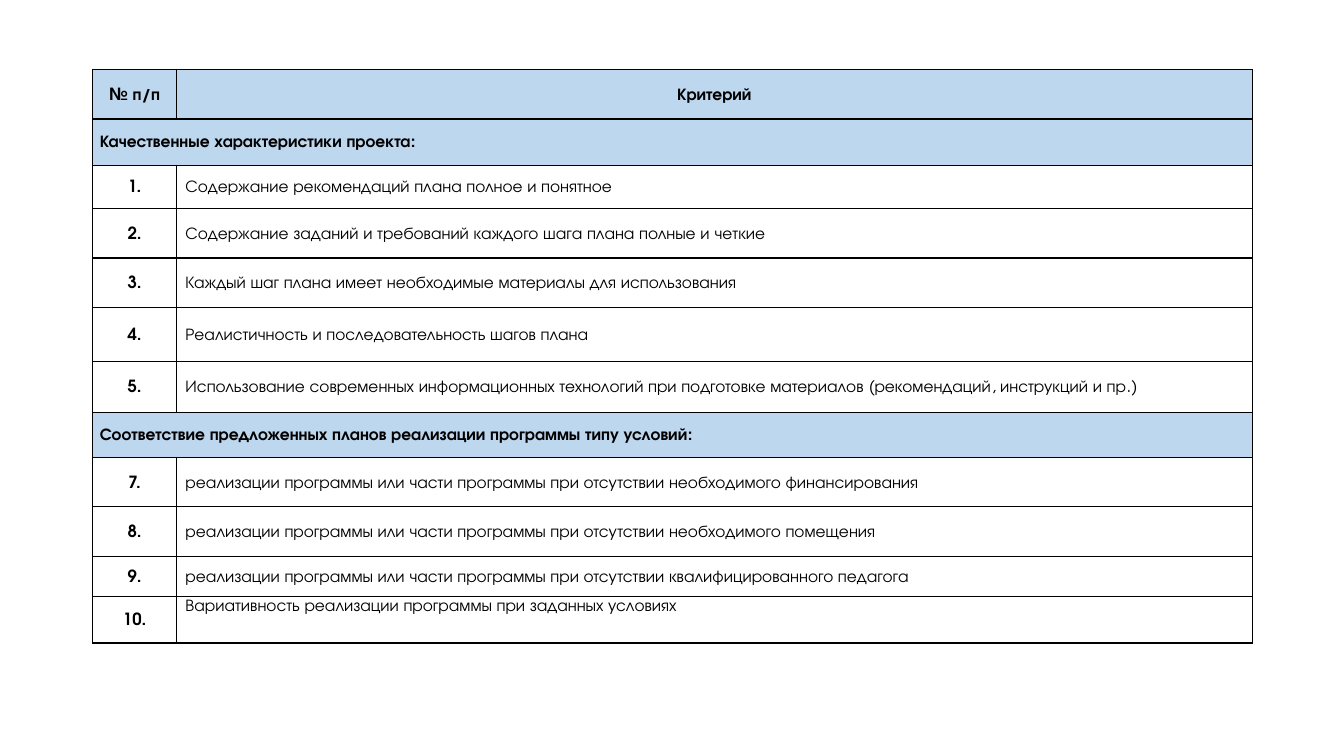
from dataclasses import dataclass

from lxml.etree import SubElement
from pptx import Presentation
from pptx.dml.color import RGBColor
from pptx.enum.text import MSO_ANCHOR as Anchor, PP_ALIGN as Align
from pptx.oxml.ns import qn
from pptx.table import _Cell as Cell
from pptx.util import Inches, Pt

FONT = "TeX Gyre Adventor"
BLACK = "000000"
HEADER_BLUE = "BDD7EE"
COLUMN_WIDTHS = (0.83, 10.67)


@dataclass(frozen=True)
class Row:
    height: float
    number: str
    criterion: str = ""
    kind: str = "item"
    anchor: Anchor = Anchor.MIDDLE


CRITERIA = [
    Row(0.49, "№ п/п", "Критерий", "header"),
    Row(0.46, "Качественные характеристики проекта:", kind="section"),
    Row(0.43, "1.", "Содержание рекомендаций плана полное и понятное"),
    Row(0.49, "2.", "Содержание заданий и требований каждого шага плана полные и четкие"),
    Row(0.49, "3.", "Каждый шаг плана имеет необходимые материалы для использования"),
    Row(0.54, "4.", "Реалистичность и последовательность шагов плана"),
    Row(0.5, "5.", "Использование современных информационных технологий при подготовке "
        "материалов (рекомендаций, инструкций и пр.)"),
    Row(0.45, "Соответствие предложенных планов реализации программы типу условий:",
        kind="section"),
    Row(0.49, "7.", "реализации программы или части программы при отсутствии "
        "необходимого финансирования"),
    Row(0.49, "8.", "реализации программы или части программы при отсутствии "
        "необходимого помещения"),
    Row(0.4, "9.", "реализации программы или части программы при отсутствии "
        "квалифицированного педагога"),
    Row(0.46, "10.", "Вариативность реализации программы при заданных условиях",
        anchor=Anchor.TOP),
]


def color(hex_value: str) -> RGBColor:
    return RGBColor.from_string(hex_value)


def style_cell(cell: Cell, filled: bool) -> None:
    properties = cell._tc.get_or_add_tcPr()
    for side in ("a:lnL", "a:lnR", "a:lnT", "a:lnB"):
        border = SubElement(properties, qn(side), w=str(Pt(1)))
        solid = SubElement(border, qn("a:solidFill"))
        SubElement(solid, qn("a:srgbClr"), val=BLACK)
    if filled:
        cell.fill.solid()
        cell.fill.fore_color.rgb = color(HEADER_BLUE)
    else:
        cell.fill.background()
    cell.margin_left = cell.margin_right = Inches(0.07)
    cell.margin_top = cell.margin_bottom = 0


def write_cell(cell: Cell, text: str, align: Align, bold: bool,
               anchor: Anchor = Anchor.MIDDLE, indent: float = 0) -> None:
    cell.text_frame.text = text
    cell.vertical_anchor = anchor
    line = cell.text_frame.paragraphs[0]
    line.alignment = align
    line.line_spacing = 1.15
    if indent:
        line._p.get_or_add_pPr().set("marL", str(Inches(indent)))
    font = line.runs[0].font
    font.name = FONT
    font.size = Pt(12)
    font.bold = bold
    font.color.rgb = color(BLACK)


def main() -> None:
    deck = Presentation()
    deck.slide_width, deck.slide_height = Inches(13.33), Inches(7.5)
    slide = deck.slides.add_slide(deck.slide_layouts[6])
    criteria = slide.shapes.add_table(
        len(CRITERIA), len(COLUMN_WIDTHS), Inches(0.92), Inches(0.69),
        Inches(sum(COLUMN_WIDTHS)), Inches(sum(row.height for row in CRITERIA))).table
    criteria.first_row = criteria.horz_banding = False
    for column, width in zip(criteria.columns, COLUMN_WIDTHS):
        column.width = Inches(width)

    for index, row in enumerate(CRITERIA):
        criteria.rows[index].height = Inches(row.height)
        number, criterion = criteria.cell(index, 0), criteria.cell(index, 1)
        for cell in (number, criterion):
            style_cell(cell, row.kind != "item")
        if row.kind == "section":
            number.merge(criterion)
            write_cell(number, row.number, Align.LEFT, True)
            continue
        write_cell(number, row.number, Align.CENTER, True)
        if row.kind == "header":
            write_cell(criterion, row.criterion, Align.CENTER, True)
        else:
            write_cell(criterion, row.criterion, Align.JUSTIFY, False, row.anchor, 0.02)

    deck.save("out.pptx")


if __name__ == "__main__":
    main()
